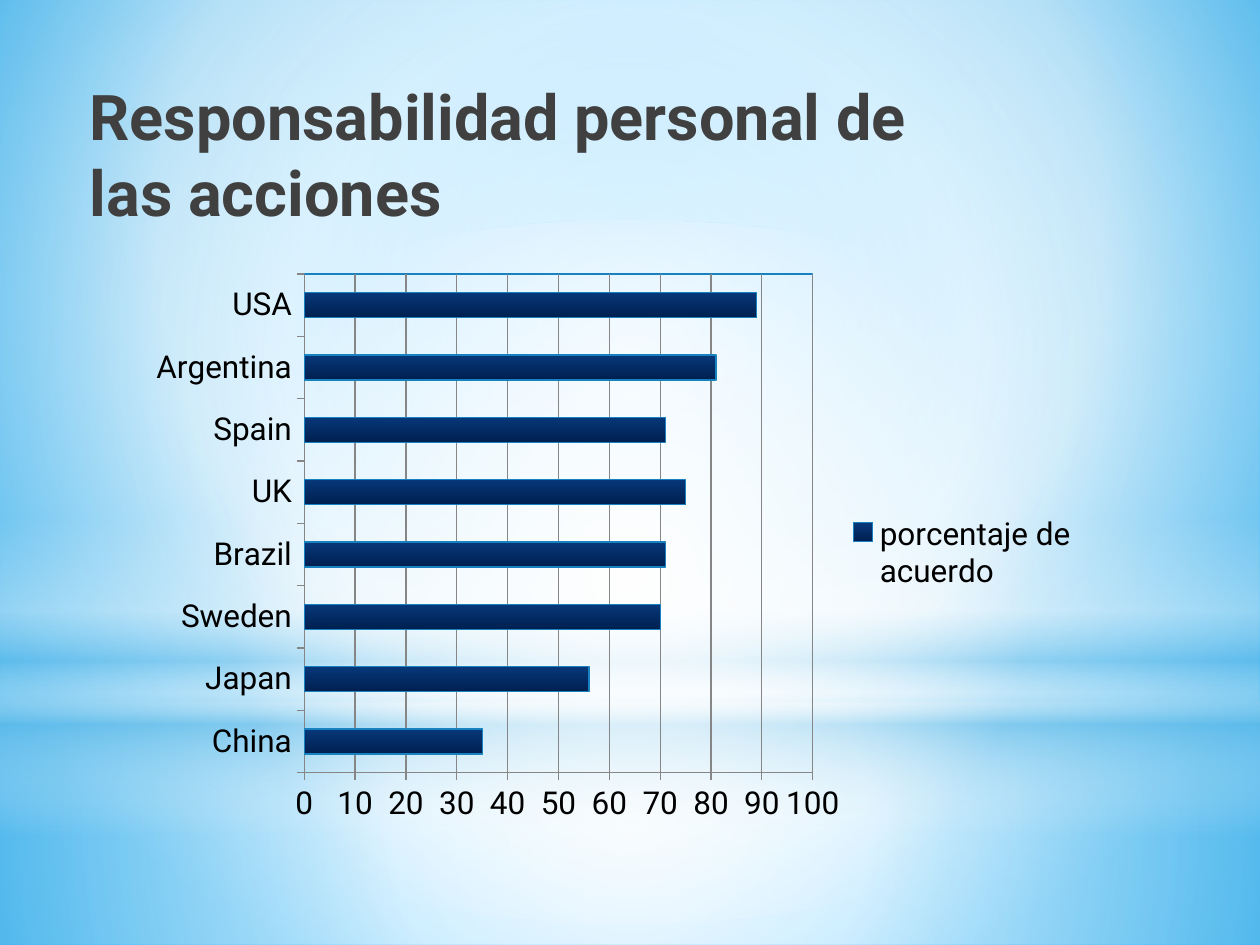
from dataclasses import dataclass
from typing import Optional

from lxml.etree import SubElement
from pptx import Presentation
from pptx.chart.data import CategoryChartData
from pptx.dml.color import RGBColor
from pptx.enum.chart import XL_CHART_TYPE as ChartType
from pptx.enum.chart import XL_LEGEND_POSITION as LegendPos
from pptx.enum.chart import XL_TICK_MARK as Tick
from pptx.enum.shapes import MSO_SHAPE as Shape
from pptx.enum.text import MSO_ANCHOR as Anchor
from pptx.enum.text import MSO_AUTO_SIZE as AutoSize
from pptx.enum.text import PP_ALIGN as Align
from pptx.oxml import parse_xml
from pptx.oxml.ns import nsdecls, qn
from pptx.util import Pt

PX = 914400 / 126
FONT = "Roboto"
BLUE, GRAY = "1782BF", "868686"
CENTER = (50, 50, 50, 50)


@dataclass
class Gradient:
    stops: list[tuple[int, str, int]]  # position %, colour, opacity %
    focus: Optional[tuple[int, int, int, int]] = None  # None: top to bottom


@dataclass
class Panel:
    kind: Shape
    top: int
    height: int
    gradient: Gradient


BACKGROUND = Gradient(
    [(0, "44BFFF", 100), (60, "C6EAFE", 100), (100, "12AEFF", 100)], (20, 10, 20, 60))
PANELS = [
    Panel(Shape.RECTANGLE, 703, 242, Gradient(
        [(0, "FFFFFF", 91), (37, "FFFFFF", 76), (100, "62BCE9", 79)], CENTER)),
    Panel(Shape.RECTANGLE, 0, 703, Gradient(
        [(0, "FFFFFF", 89), (48, "FFFFFF", 62), (100, "62BCE9", 79)], CENTER)),
    Panel(Shape.RECTANGLE, 519, 315, Gradient(
        [(0, "FFFFFF", 0), (29, "FFFFFF", 30), (45, "62BCE9", 40),
         (55, "FFFFFF", 26), (65, "62BCE9", 60), (100, "FFFFFF", 0)])),
    Panel(Shape.OVAL, 221, 703, Gradient(
        [(0, "FFFFFF", 100), (56, "FFFFFF", 0)], CENTER)),
]
BAR = Gradient([(0, "073779", 100), (100, "002050", 100)])
AGREEMENT = {"China": 35, "Japan": 56, "Sweden": 70, "Brazil": 71,
             "UK": 75, "Spain": 71, "Argentina": 81, "USA": 89}


def px(n: int) -> int:
    return round(n * PX)


def rgb(color: str) -> RGBColor:
    return RGBColor.from_string(color)


def paint(fill, owner, g: Gradient) -> None:
    """Give the owner element of a fill a gradient."""
    fill.solid()
    stops = "".join(
        f'<a:gs pos="{pos * 1000}"><a:srgbClr val="{color}">'
        f'<a:alpha val="{alpha * 1000}"/></a:srgbClr></a:gs>'
        for pos, color, alpha in g.stops)
    if g.focus:
        sides = " ".join(f'{k}="{v * 1000}"' for k, v in zip("ltrb", g.focus))
        way = f'<a:path path="circle"><a:fillToRect {sides}/></a:path>'
    else:
        way = '<a:lin ang="5400000" scaled="0"/>'
    solid = owner.find(qn("a:solidFill"))
    owner.replace(solid, parse_xml(
        f'<a:gradFill {nsdecls("a")} rotWithShape="1">'
        f'<a:gsLst>{stops}</a:gsLst>{way}</a:gradFill>'))


def add_panel(slide, panel: Panel) -> None:
    sp = slide.shapes.add_shape(panel.kind, 0, px(panel.top), px(1260), px(panel.height))
    sp.shadow.inherit = False
    sp.line.fill.background()
    paint(sp.fill, sp._element.spPr, panel.gradient)


def set_title(slide, text: str) -> None:
    sp = slide.shapes.title
    sp.left, sp.top, sp.width, sp.height = px(77), px(72), px(897), px(157)
    tf = sp.text_frame
    tf.word_wrap = True
    tf.auto_size = AutoSize.NONE
    tf.vertical_anchor = Anchor.BOTTOM
    tf.margin_bottom = 0
    p = tf.paragraphs[0]
    p.alignment = Align.LEFT
    r = p.add_run()
    r.text = text
    r.font.name, r.font.size, r.font.bold = FONT, Pt(36), True
    r.font.color.rgb = rgb("404040")
    slide.shapes._spTree.append(sp._element)  # in front of the panels


def set_line(line, color: str) -> None:
    line.color.rgb = rgb(color)
    line.width = Pt(0.75)


def set_layout(element, box: tuple[float, ...], inner: bool = False) -> None:
    """Place a chart part by fractions of the chart area."""
    layout = element.find(qn("c:layout"))
    if layout is None:
        layout = parse_xml(f'<c:layout {nsdecls("c")}/>')
        element.insert(1 if element.tag == qn("c:legend") else 0, layout)
    for child in list(layout):
        layout.remove(child)
    manual = SubElement(layout, qn("c:manualLayout"))
    if inner:
        SubElement(manual, qn("c:layoutTarget")).set("val", "inner")
    for name in ("xMode", "yMode"):
        SubElement(manual, qn(f"c:{name}")).set("val", "edge")
    for name, value in zip("xywh", box):
        SubElement(manual, qn(f"c:{name}")).set("val", str(value))


def add_bar_chart(slide) -> None:
    data = CategoryChartData()
    data.categories = list(AGREEMENT)
    data.add_series("porcentaje de acuerdo", list(AGREEMENT.values()))
    chart = slide.shapes.add_chart(
        ChartType.BAR_CLUSTERED, px(105), px(238), px(997), px(601), data).chart
    chart.has_title = False
    chart.font.name, chart.font.size = FONT, Pt(18)
    chart.font.color.rgb = rgb("000000")

    # Bars
    plot = chart.plots[0]
    plot.gap_width = 150
    plot.vary_by_categories = False
    series = plot.series[0]
    set_line(series.format.line, BLUE)
    paint(series.format.fill, series._element.find(qn("c:spPr")), BAR)

    # Axes
    values = chart.value_axis
    values.minimum_scale, values.maximum_scale, values.major_unit = 0, 100, 10
    values.has_major_gridlines = True
    set_line(values.major_gridlines.format.line, GRAY)
    for axis in (chart.category_axis, values):
        axis.major_tick_mark = Tick.OUTSIDE
        axis.minor_tick_mark = Tick.NONE
        set_line(axis.format.line, GRAY)

    # Plot frame and legend
    area = chart._chartSpace.chart.plotArea
    set_layout(area, (0.2, 0.06, 0.51, 0.83), inner=True)
    area.append(parse_xml(
        f'<c:spPr {nsdecls("c", "a")}><a:noFill/><a:ln w="{Pt(0.75)}">'
        f'<a:solidFill><a:srgbClr val="{BLUE}"/></a:solidFill></a:ln></c:spPr>'))
    chart.has_legend = True
    chart.legend.position = LegendPos.RIGHT
    chart.legend.include_in_layout = False
    set_layout(chart.legend._element, (0.73, 0.46, 0.26, 0.13))


def main() -> None:
    prs = Presentation()
    prs.slide_width, prs.slide_height = px(1260), px(945)
    slide = prs.slides.add_slide(prs.slide_layouts[5])
    fill = slide.background.fill
    fill.solid()
    paint(fill, slide._element.find(f'.//{qn("p:bgPr")}'), BACKGROUND)
    for panel in PANELS:
        add_panel(slide, panel)
    set_title(slide, "Responsabilidad personal de las acciones")
    add_bar_chart(slide)
    prs.save("out.pptx")


if __name__ == "__main__":
    main()
